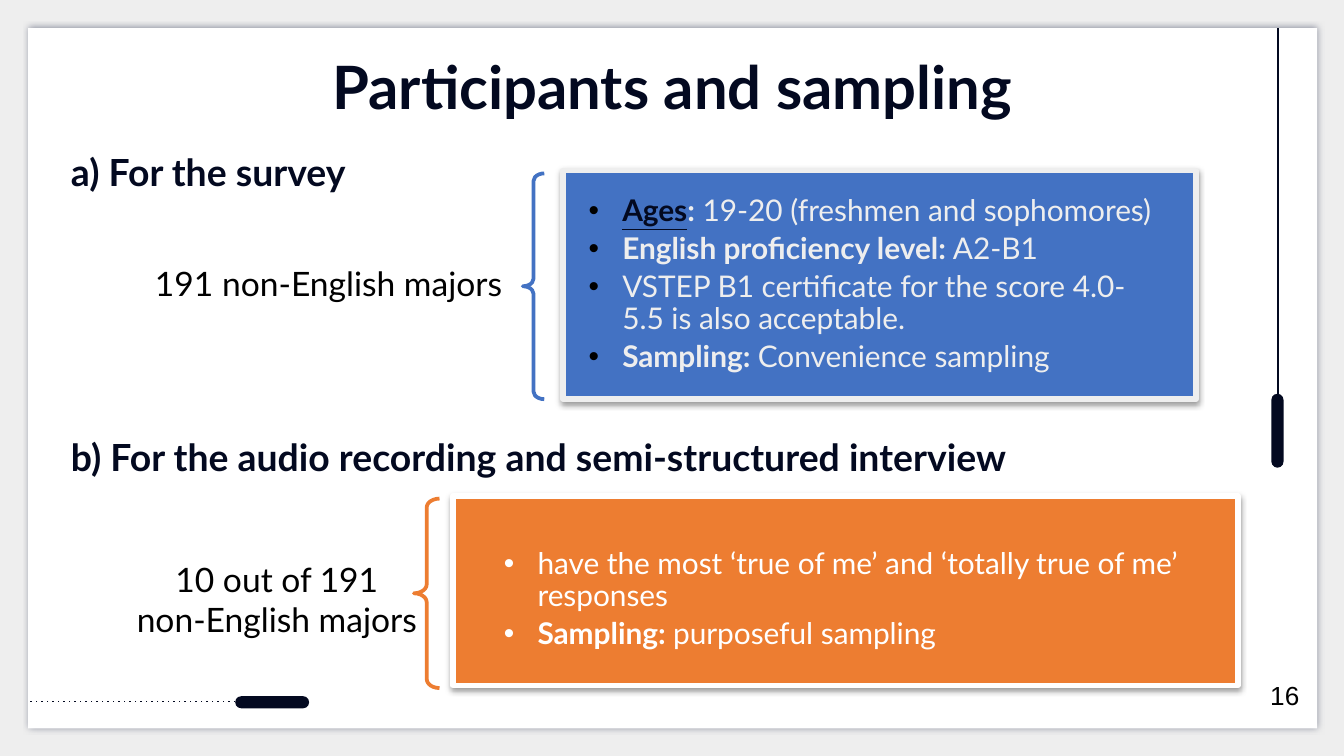
from lxml.etree import SubElement
from pptx import Presentation
from pptx.dml.color import RGBColor
from pptx.enum.dml import MSO_LINE
from pptx.enum.shapes import MSO_CONNECTOR, MSO_SHAPE
from pptx.enum.text import MSO_ANCHOR, MSO_AUTO_SIZE, PP_ALIGN
from pptx.oxml.ns import qn
from pptx.util import Inches, Pt

NAVY, BLUE, ORANGE = "030920", "4372C3", "ED7D31"
WHITE, BLACK, PALE = "FFFFFF", "000000", "EEEEEE"


def color(value):
    return RGBColor.from_string(value)


class SlideBuilder:
    """Holds the style and the page being drawn."""

    font = "Lato"

    def __init__(self, page):
        self.page = page
        fill = page.background.fill
        fill.solid()
        fill.fore_color.rgb = color(PALE)

    def shape(self, kind, place, fill=None, line=None, width=0, shadow=None, adjust=()):
        """Shadow is (colour, opacity %, blur pt, distance pt, angle)."""
        shape = self.page.shapes.add_shape(kind, *map(Inches, place))
        for index, value in enumerate(adjust):
            shape.adjustments[index] = value
        if fill:
            shape.fill.solid()
            shape.fill.fore_color.rgb = color(fill)
        else:
            shape.fill.background()
        if line:
            shape.line.color.rgb = color(line)
            shape.line.width = Pt(width)
        else:
            shape.line.fill.background()
        shape.shadow.inherit = False
        if shadow:
            self.add_shadow(shape, *shadow)
        return shape

    def add_shadow(self, shape, tint, opacity, blur, distance, angle):
        effects = shape.element.spPr.find(qn("a:effectLst"))
        outer = SubElement(effects, qn("a:outerShdw"), blurRad=str(Pt(blur)),
                           dist=str(Pt(distance)), dir=str(angle * 60000),
                           algn="ctr", rotWithShape="0")
        tone = SubElement(outer, qn("a:srgbClr"), val=tint)
        SubElement(tone, qn("a:alpha"), val=str(opacity * 1000))

    def pill(self, left, top, rotation=0):
        pill = self.shape(MSO_SHAPE.ROUNDED_RECTANGLE, (left, top, 0.09, 0.55),
                          NAVY, adjust=[0.5])
        pill.rotation = rotation

    def line(self, start, end, dotted=False):
        line = self.page.shapes.add_connector(
            MSO_CONNECTOR.STRAIGHT, *map(Inches, start + end))
        line.line.color.rgb = color(NAVY)
        line.line.width = Pt(0.75)
        if dotted:
            line.line.dash_style = MSO_LINE.ROUND_DOT
            line.element.spPr.find(".//" + qn("a:prstDash")).set("val", "dot")
        SubElement(line.element.spPr, qn("a:effectLst"))

    def brace(self, place, tint):
        self.shape(MSO_SHAPE.LEFT_BRACE, place, line=tint, width=2, adjust=[0.35, 0.5])

    def card(self, place, fill, border):
        self.shape(MSO_SHAPE.RECTANGLE, place, fill, border, 3,
                   shadow=(BLACK, 38, 3.1, 1.6, 90))

    def frame(self, box, insets, anchor):
        frame = box.text_frame
        frame.word_wrap = True
        frame.auto_size = MSO_AUTO_SIZE.NONE
        frame.vertical_anchor = anchor
        frame.margin_left = frame.margin_right = Inches(insets[0])
        frame.margin_top = frame.margin_bottom = Inches(insets[1])
        return frame

    def style(self, span, size, tint, bold=False, font=None):
        span.font.name = font or self.font
        span.font.size = Pt(size)
        span.font.bold = bold
        span.font.color.rgb = color(tint)

    def title(self, place, text):
        box = self.page.shapes.title
        box.left, box.top, box.width, box.height = map(Inches, place)
        box.element.getparent().append(box.element)  # in front of the panel
        frame = self.frame(box, (0.1, 0.1), MSO_ANCHOR.TOP)
        frame.text = text
        para = frame.paragraphs[0]
        para.alignment = PP_ALIGN.CENTER
        self.style(para.runs[0], 32, NAVY, bold=True)

    def text(self, place, text, size, tint=BLACK, bold=False, insets=(0.1, 0.1),
             anchor=MSO_ANCHOR.TOP, align=PP_ALIGN.LEFT, indent=0, spacing=1.0,
             font=None):
        box = self.page.shapes.add_textbox(*map(Inches, place))
        frame = self.frame(box, insets, anchor)
        frame.text = text
        for para in frame.paragraphs:
            para.alignment = align
            para.line_spacing = spacing
            if indent:
                para._p.get_or_add_pPr().set("marL", str(Inches(indent)))
            self.style(para.runs[0], size, tint, bold, font)

    def heading(self, place, text):
        self.text(place, text, 20, NAVY, bold=True, indent=0.17)

    def label(self, place, text, spacing=1.0):
        self.text(place, text, 18, insets=(0.18, 0.06), anchor=MSO_ANCHOR.MIDDLE,
                  align=PP_ALIGN.CENTER, spacing=spacing)

    def bullets(self, place, items, tint, bullet_tint):
        """Each item is a list of (text, bold) spans."""
        box = self.page.shapes.add_textbox(*map(Inches, place))
        frame = self.frame(box, (0.08, 0.08), MSO_ANCHOR.MIDDLE)
        for index, spans in enumerate(items):
            para = frame.add_paragraph() if index else frame.paragraphs[0]
            para.level = 1
            para.line_spacing = 0.9
            para.space_before = Pt(3 if index else 0)
            props = para._p.get_or_add_pPr()
            props.set("marL", str(Inches(0.25)))
            props.set("indent", str(Inches(-0.25)))
            SubElement(SubElement(props, qn("a:buClr")), qn("a:srgbClr"), val=bullet_tint)
            SubElement(props, qn("a:buFont"), typeface="Arial")
            SubElement(props, qn("a:buChar"), char="•")
            for text, bold in spans:
                span = para.add_run()
                span.text = text
                self.style(span, 16, tint, bold)
        return frame


def main():
    deck = Presentation()
    deck.slide_width = Inches(10)
    deck.slide_height = deck.slide_width * 9 // 16
    slide = SlideBuilder(deck.slides.add_slide(deck.slide_layouts[5]))

    slide.shape(MSO_SHAPE.RECTANGLE, (0.21, 0.21, 9.59, 5.21), WHITE,
                shadow=("2A3250", 50, 3.4, 0.8, 0))
    slide.pill(1.98, 4.95, rotation=270)
    slide.line((1.75, 5.22), (0.21, 5.22), dotted=True)
    slide.pill(9.46, 2.93)
    slide.line((9.51, 2.93), (9.51, 0.21))

    slide.title((0.79, 0.27, 8.43, 0.63), "Participants and sampling")
    slide.heading((0.26, 1.01, 3.04, 0.47), "a) For the survey")
    slide.heading((0.26, 3.13, 9.26, 0.5),
                  "b) For the audio recording and semi-structured interview")

    slide.label((0.92, 1.95, 3.05, 0.35), "191 non-English majors", spacing=0.9)
    slide.brace((3.89, 1.29, 0.16, 1.68), BLUE)
    slide.card((4.19, 1.27, 4.71, 1.7), BLUE, PALE)
    survey = slide.bullets((4.3, 1.27, 4.45, 1.7), [
        [("Ages", True), (":", True), (" 19-20 (freshmen and sophomores)", False)],
        [("English proficiency level:", True), (" A2-B1", False)],
        [("VSTEP B1 certificate for the score 4.0-5.5 is also acceptable.", False)],
        [("Sampling: ", True), ("Convenience sampling", False)],
    ], PALE, BLACK)
    ages = survey.paragraphs[0].runs[0]
    ages.font.underline = True
    ages.font.color.rgb = color(NAVY)

    slide.label((0.72, 3.75, 2.68, 1.41), "10 out of 191\nnon-English majors")
    slide.brace((3.08, 3.71, 0.19, 1.41), ORANGE)
    slide.card((3.37, 3.69, 5.84, 1.41), ORANGE, WHITE)
    slide.bullets((3.67, 3.76, 6.06, 1.41), [
        [("have the most ‘true of me’ and ‘totally true of me’ responses", False)],
        [("Sampling: ", True), ("purposeful sampling", False)],
    ], WHITE, WHITE)

    slide.text((9.28, 5.01, 0.56, 0.34), "16", 14, insets=(0.1, 0.05),
               align=PP_ALIGN.CENTER, font="Arial")
    deck.save("out.pptx")


if __name__ == "__main__":
    main()
